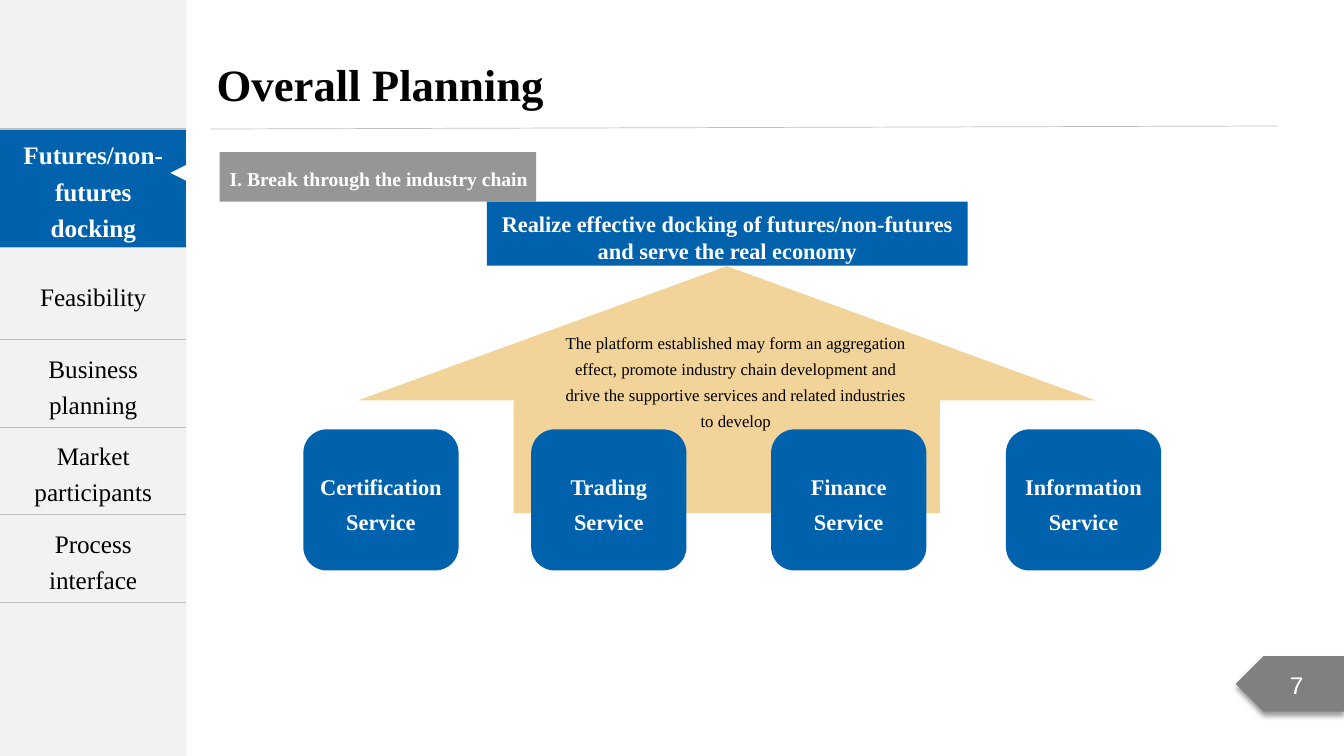
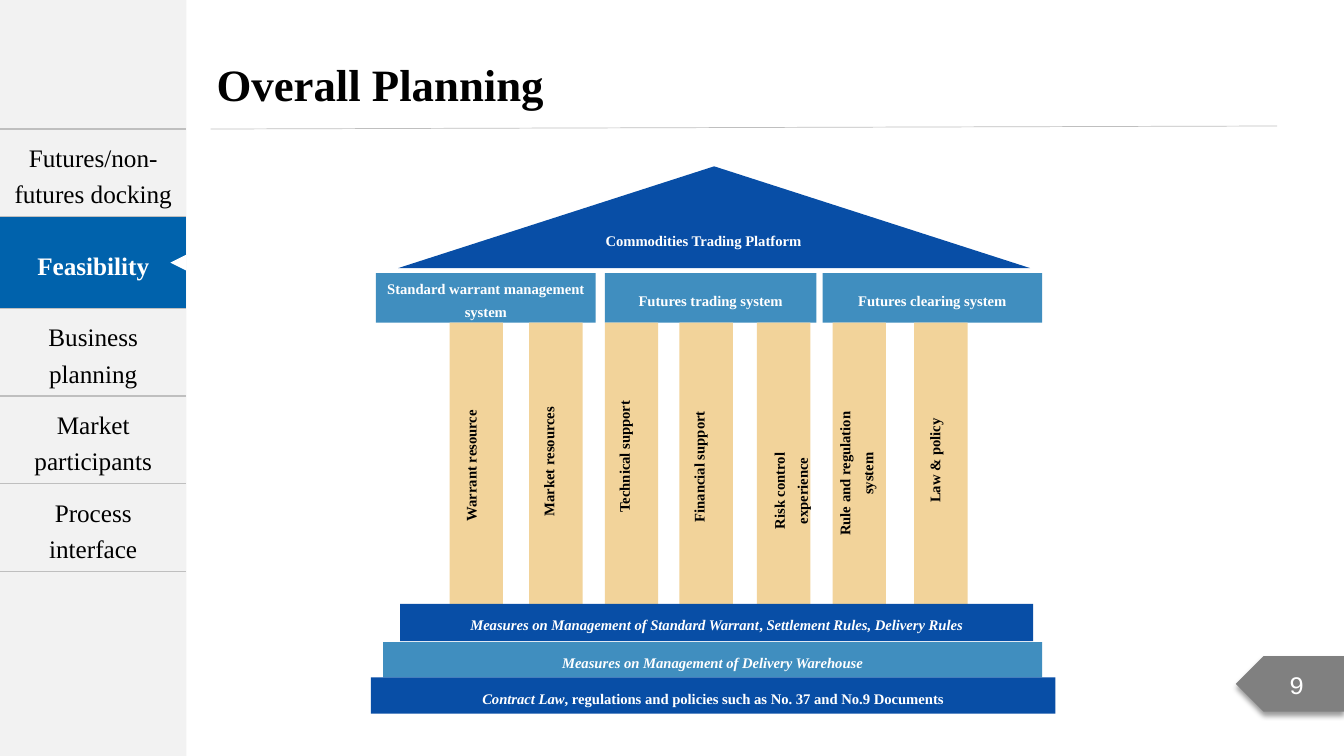
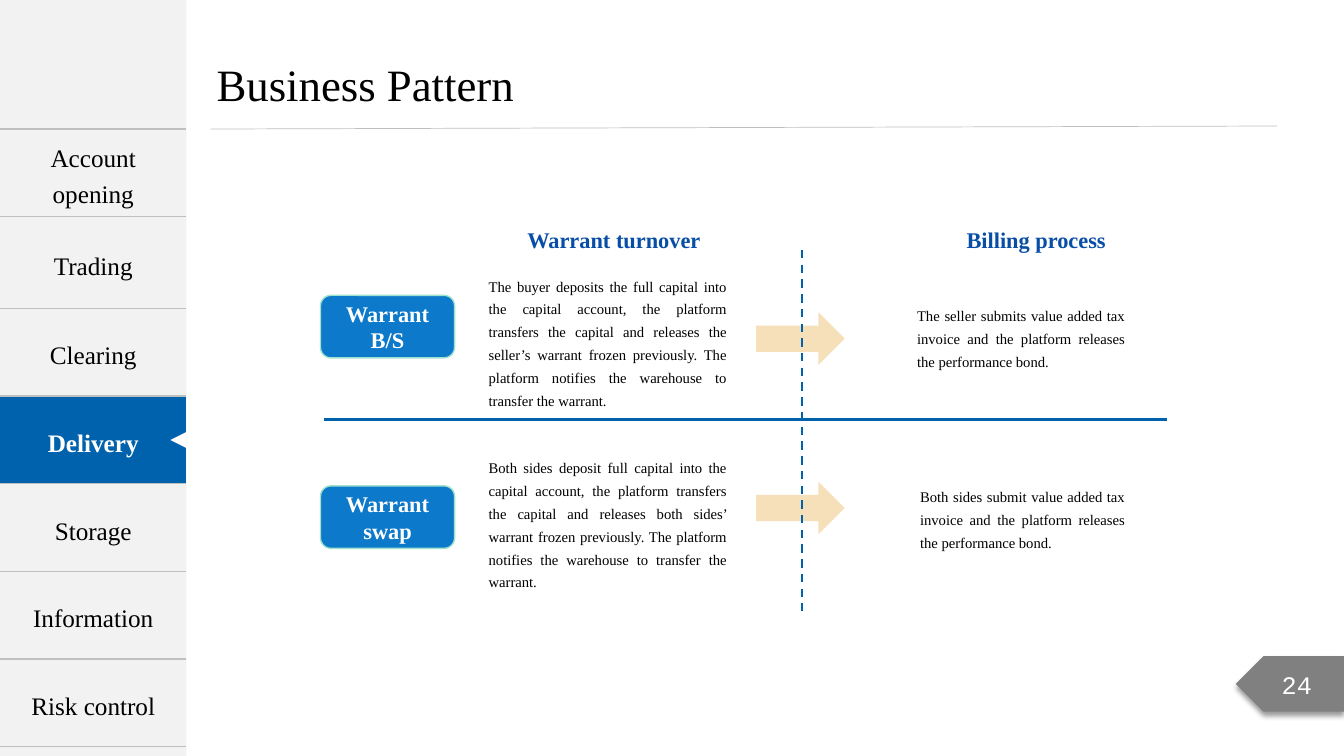
import pptx
import pptx.util
import pptx.dml.color
import pptx.enum.dml
import pptx.enum.shapes
import pptx.enum.text
import pptx.oxml
import pptx.oxml.ns

# Grid: 75 rows high; columns are as wide as rows are tall
WIDE, HIGH = 133.33, 75
UNIT = pptx.util.Inches(7.5) / HIGH

# Shared look
FONT = "Times New Roman"
WHITE, BLACK, PALE, RULE, GRAY = "FFFFFF", "000000", "F2F2F2", "BFBFBF", "808080"
BLUE, NAVY, SKY, BRIGHT, SAND, MINT = "0062AC", "084EA6", "408EBF", "0D79CA", "F2D39A", "9EE2CF"
SIDE = 18.5
TOP = 12.8

SHAPE = pptx.enum.shapes.MSO_SHAPE
ALIGN = {"l": pptx.enum.text.PP_ALIGN.LEFT,
         "c": pptx.enum.text.PP_ALIGN.CENTER,
         "j": pptx.enum.text.PP_ALIGN.JUSTIFY}
ANCHOR = {"t": pptx.enum.text.MSO_ANCHOR.TOP,
          "m": pptx.enum.text.MSO_ANCHOR.MIDDLE}


def size(count):
    return pptx.util.Emu(round(count * UNIT))


def color(code):
    return pptx.dml.color.RGBColor.from_string(code)


def node(xml):
    return pptx.oxml.parse_xml(xml.replace(">", " %s>" % pptx.oxml.ns.nsdecls("a"), 1)
                               if "/>" not in xml.split(">")[0] + ">"
                               else xml.replace("/>", " %s/>" % pptx.oxml.ns.nsdecls("a"), 1))


# Text: one paragraph per entry; a paragraph is a string or (string, italic) runs
def write(frame, text, pt=10.5, ink=BLACK, bold=False, align="c", space=1.3, font=FONT):
    paras = [text] if isinstance(text, str) else text
    for i, para in enumerate(paras):
        line = frame.paragraphs[0] if i == 0 else frame.add_paragraph()
        line.alignment = ALIGN[align]
        line.line_spacing = space
        for words, slant in [(para, False)] if isinstance(para, str) else para:
            run = line.add_run()
            run.text = words
            run.font.name, run.font.size = font, pptx.util.Pt(pt)
            run.font.bold, run.font.italic = bold, slant
            run.font.color.rgb = color(ink)


def setup(frame, anchor, pads=(1, 0.5, 1, 0.5)):
    frame.word_wrap = True
    frame.vertical_anchor = ANCHOR[anchor]
    (frame.margin_left, frame.margin_top,
     frame.margin_right, frame.margin_bottom) = map(size, pads)


def label(slide, at, text, turn=False, **form):
    box = slide.shapes.add_textbox(*map(size, at))
    if turn:
        setup(box.text_frame, "m", (0, 0, 0, 0))
        box.text_frame._txBody.bodyPr.set("vert", "vert270")
    else:
        setup(box.text_frame, "t")
    write(box.text_frame, text, **form)


def block(slide, kind, at, fill, text=None, edge=None, alpha=None, adjust=(),
          pads=(1, 0.5, 1, 0.5), **form):
    item = slide.shapes.add_shape(kind, *map(size, at))
    item.shadow.inherit = False
    item.fill.solid()
    item.fill.fore_color.rgb = color(fill)
    if alpha:
        tint = item.element.spPr.find(".//" + pptx.oxml.ns.qn("a:srgbClr"))
        tint.append(node('<a:alpha val="%d"/>' % (alpha * 1000)))
    if edge:
        item.line.color.rgb = color(edge)
        item.line.width = pptx.util.Pt(1)
    else:
        item.line.fill.background()
    for i, part in enumerate(adjust):
        item.adjustments[i] = part
    if text:
        setup(item.text_frame, "m", pads)
        write(item.text_frame, text, **{"ink": WHITE, "bold": True, **form})
    return item


def rule(slide, start, end, ink, pt, dash=False):
    line = slide.shapes.add_connector(pptx.enum.shapes.MSO_CONNECTOR.STRAIGHT,
                                      *map(size, start + end))
    line.line.color.rgb = color(ink)
    line.line.width = pptx.util.Pt(pt)
    if dash:
        line.line.dash_style = pptx.enum.dml.MSO_LINE.DASH
    line.element.spPr.append(node("<a:effectLst/>"))


# Side menu with the current entry lit and a notch pointing at it
def border(cell):
    props = cell._tc.get_or_add_tcPr()
    for side in "LR":
        props.append(node('<a:ln%s w="0"><a:noFill/></a:ln%s>' % (side, side)))
    for side in "TB":
        props.append(node('<a:ln%s w="12700"><a:solidFill><a:srgbClr val="%s"/>'
                          '</a:solidFill></a:ln%s>' % (side, RULE, side)))


def menu(slide, names, active):
    rows = [9.1 if i == 1 else 8.7 for i in range(len(names))]
    table = slide.shapes.add_table(len(names), 1, 0, size(TOP), size(SIDE),
                                   size(sum(rows))).table
    table.first_row = table.horz_banding = False
    for i, name in enumerate(names):
        table.rows[i].height = size(rows[i])
        cell, lit = table.cell(i, 0), i == active
        border(cell)
        cell.fill.solid()
        cell.fill.fore_color.rgb = color(BLUE if lit else PALE)
        cell.vertical_anchor = ANCHOR["m"]
        write(cell.text_frame, name, pt=18, ink=WHITE if lit else BLACK, bold=lit)
    mid = TOP + sum(rows[:active]) + rows[active] / 2
    notch = block(slide, SHAPE.ISOSCELES_TRIANGLE, (SIDE - 1.6, mid - 0.8, 1.6, 1.6), WHITE)
    notch.rotation = 270


# Frame common to all slides
def page(deck, title, number, names, active, bold=True):
    slide = deck.slides.add_slide(deck.slide_layouts[6])
    block(slide, SHAPE.RECTANGLE, (0, 0, SIDE, HIGH), PALE)
    rule(slide, (20.9, TOP), (126.7, 12.5), RULE, 0.5)
    tab = block(slide, SHAPE.PENTAGON, (122.6, 65.1, 10.73, 5.5), GRAY, str(number),
                pt=18, bold=False, space=1, font="Courier New")
    tab.element.spPr.xfrm.set("flipH", "1")
    tab.element.spPr.find(pptx.oxml.ns.qn("a:effectLst")).append(node(
        '<a:outerShdw blurRad="50800" dist="38100" dir="5400000" algn="t" rotWithShape="0">'
        '<a:srgbClr val="000000"><a:alpha val="40000"/></a:srgbClr></a:outerShdw>'))
    menu(slide, names, active)
    label(slide, (20.5, 5.1, 51, 6.4), title, pt=32, bold=bold, align="l", space=1)
    return slide


PLAN = ["Futures/non-futures docking", "Feasibility", "Business planning",
        "Market participants", "Process interface"]
TRADE = ["Account opening", "Trading", "Clearing", "Delivery", "Storage",
         "Information", "Risk control"]


def docking(deck):
    slide = page(deck, "Overall Planning", 7, PLAN, 0)
    block(slide, SHAPE.UP_ARROW, (35.5, 26.4, 73.2, 24.5), SAND, adjust=(0.578, 0.544))
    label(slide, (54.5, 31.9, 37, 11.5),
          "The platform established may form an aggregation effect, promote industry chain "
          "development and drive the supportive services and related industries to develop",
          pt=12)
    block(slide, SHAPE.RECTANGLE, (48.3, 20, 47.7, 6.35), BLUE,
          ["Realize effective docking of futures/non-futures", "and serve the real economy"],
          pt=16, space=1, pads=(0.5, 0.9, 0.5, 0.3))
    block(slide, SHAPE.RECTANGLE, (21.8, 15.1, 31.4, 4.9), GRAY,
          "I. Break through the industry chain", alpha=82, pt=14, align="l",
          pads=(1, 0.2, 0, 0.5))
    # Services
    for x, name in ((30.1, "Certification"), (52.7, "Trading"),
                    (76.5, "Finance"), (99.8, "Information")):
        block(slide, SHAPE.ROUNDED_RECTANGLE, (x, 42.6, 15.4, 14), BLUE,
              [name, "Service"], pt=16)


def temple(deck):
    slide = page(deck, "Overall Planning", 9, PLAN, 1)
    # Roof and beams
    block(slide, SHAPE.ISOSCELES_TRIANGLE, (39.5, 16.5, 62.7, 10.1), NAVY)
    label(slide, (55.8, 22, 28, 3.1), "Commodities Trading Platform", ink=WHITE, bold=True)
    for x, wide, name in ((37.3, 21.8, "Standard warrant management system"),
                          (60, 21, "Futures trading system"),
                          (81.6, 21.8, "Futures clearing system")):
        block(slide, SHAPE.RECTANGLE, (x, 27.1, wide, 4.9), SKY, name)
    # Pillars: left edge, label's shift from the middle, label's centre, name
    for x, shift, mid, name in ((44.6, -0.8, 46.2, "Warrant resource"),
                                (52.5, -1, 45.8, "Market resources"),
                                (60, -1, 45.3, "Technical support"),
                                (67.4, -1, 46.3, "Financial support"),
                                (75.1, 0.4, 48.7, "Risk control experience"),
                                (82.6, -0.6, 47, "Rule and regulation system"),
                                (90.7, -0.9, 45.7, "Law & policy")):
        block(slide, SHAPE.RECTANGLE, (x, 32, 5.3, 27.9), SAND)
        label(slide, (x + 0.2 + shift, mid - 7, 4.9, 14), name, turn=True, bold=True)
    # Steps
    for at, fill, runs in (
            ((39.7, 59.9, 62.8, 3.7), NAVY,
             [("Measures on Management of Standard Warrant", True), (", ", False),
              ("Settlement Rules, Delivery Rules", True)]),
            ((38, 63.7, 65.4, 3.5), SKY,
             [("Measures on Management of Delivery Warehouse", True)]),
            ((36.8, 67.2, 67.9, 3.6), NAVY,
             [("Contract Law", True),
              (", regulations and policies such as No. 37 and No.9 Documents", False)])):
        block(slide, SHAPE.RECTANGLE, at, fill, [runs])


def pattern(deck):
    slide = page(deck, "Business Pattern", 24, TRADE, 3, bold=False)
    rule(slide, (32.1, 41.6), (115.8, 41.6), BLUE, 2.25)
    for x, name in ((50.4, "Warrant turnover"), (92.3, "Billing process")):
        label(slide, (x, 21.1, 21, 4.5), name, pt=16, ink=NAVY, bold=True)
    # Rows: button top, arrow top, body top, note left, then the texts
    for y, tip, body, left, name, turn, bill in (
            (29.3, 31, 26.5, 90, "Warrant B/S",
             "The buyer deposits the full capital into the capital account, the platform "
             "transfers the capital and releases the seller’s warrant frozen previously. "
             "The platform notifies the warehouse to transfer the warrant.",
             "The seller submits value added tax invoice and the platform releases "
             "the performance bond."),
            (48.2, 47.8, 44.5, 90.3, "Warrant swap",
             "Both sides deposit full capital into the capital account, the platform "
             "transfers the capital and releases both sides’ warrant frozen previously. "
             "The platform notifies the warehouse to transfer the warrant.",
             "Both sides submit value added tax invoice and the platform releases "
             "the performance bond.")):
        block(slide, SHAPE.ROUNDED_RECTANGLE, (31.8, y, 13.3, 6.2), BRIGHT, name,
              edge=MINT, pt=16, space=1)
        block(slide, SHAPE.RIGHT_ARROW, (75, tip, 8.8, 5.2), SAND, alpha=69)
        label(slide, (47.5, body, 25.6, 14.8), turn, align="j")
        label(slide, (left, body + 2.9, 112.6 - left, 7.9), bill, align="j")
    rule(slide, (79.6, 24.8), (79.6, 60.6), BLUE, 1.5, dash=True)


def main():
    deck = pptx.Presentation()
    deck.slide_width, deck.slide_height = size(WIDE), size(HIGH)
    docking(deck)
    temple(deck)
    pattern(deck)
    deck.save("out.pptx")


if __name__ == "__main__":
    main()
